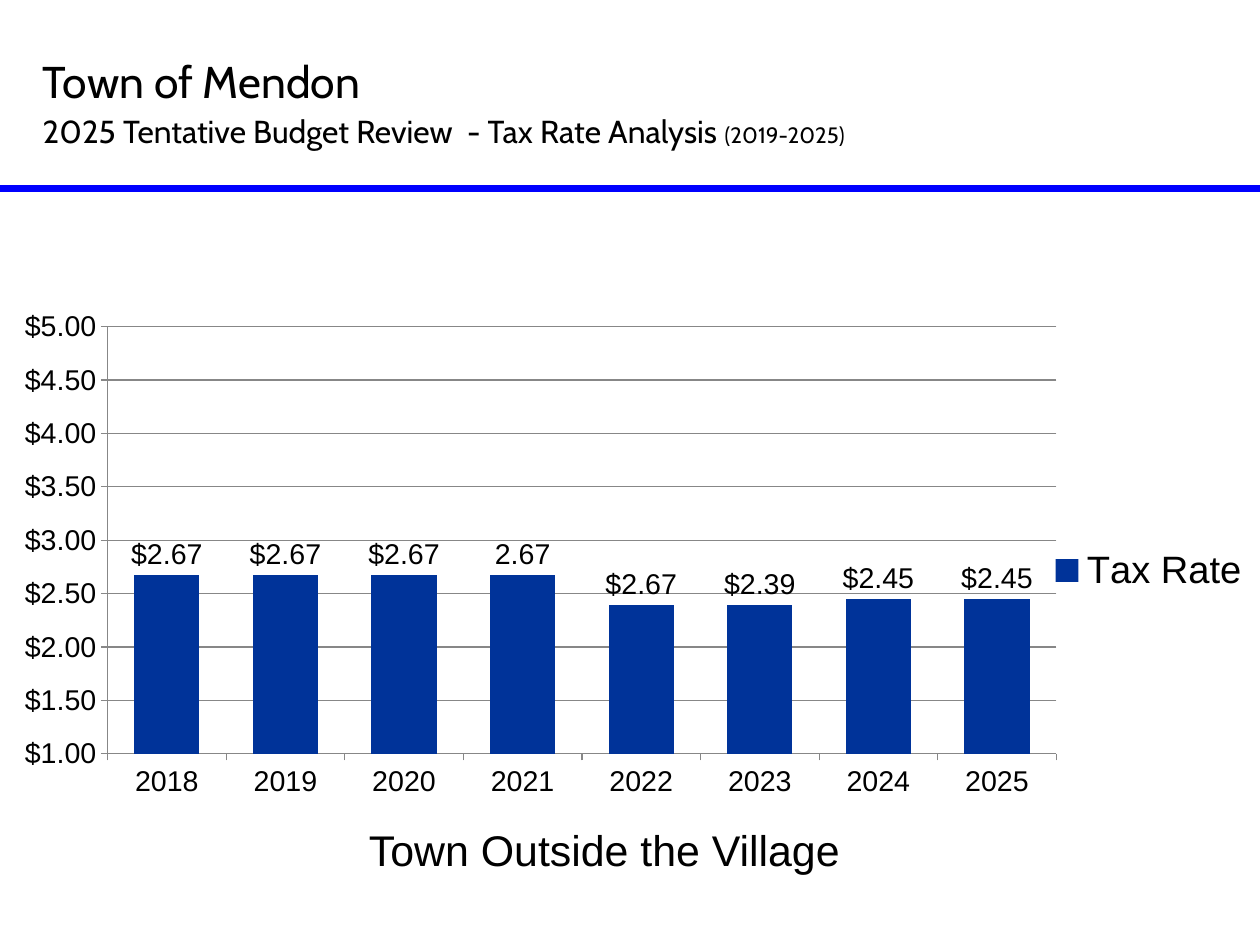
from dataclasses import dataclass

import lxml.etree
import pptx
import pptx.chart.data
import pptx.dml.color
import pptx.enum.chart
import pptx.enum.shapes
import pptx.enum.text
import pptx.oxml
import pptx.oxml.ns
import pptx.util

RGBColor = pptx.dml.color.RGBColor
BLACK = RGBColor(0x00, 0x00, 0x00)
RULE_BLUE = RGBColor(0x00, 0x00, 0xFF)
BAR_BLUE = RGBColor(0x00, 0x33, 0x99)
GRID_GRAY = RGBColor(0x87, 0x87, 0x87)

SLIDE_WIDTH = pptx.util.Cm(28)
SLIDE_HEIGHT = pptx.util.Cm(21)
DOLLARS = '"$"#,##0.00'
TAX_RATES = {
    "2018": 2.67, "2019": 2.67, "2020": 2.67, "2021": 2.67,
    "2022": 2.39, "2023": 2.39, "2024": 2.45, "2025": 2.45,
}
TYPED_LABELS = {"2021": "2.67", "2022": "$2.67", "2023": "$2.39"}


@dataclass(frozen=True)
class Area:
    """A rectangle in percent of the slide's width and height."""
    left: float
    top: float
    width: float
    height: float

    def lengths(self) -> tuple[int, int, int, int]:
        return (
            int(SLIDE_WIDTH * self.left / 100),
            int(SLIDE_HEIGHT * self.top / 100),
            int(SLIDE_WIDTH * self.width / 100),
            int(SLIDE_HEIGHT * self.height / 100),
        )


@dataclass(frozen=True)
class Phrase:
    text: str
    size: float
    ends_line: bool = False


TITLE_AREA = Area(2.5, 2.18, 69.15, 16.69)
CAPTION_AREA = Area(21.29, 86.58, 53.36, 6.65)
CHART_AREA = Area(-0.36, 31.56, 100, 54.78)
RULE_TOP = 19.95
PLOT_PERCENT = {"x": 8.9, "y": 5.5, "w": 75.3, "h": 82.5}
LEGEND_PERCENT = {"x": 83.5, "y": 47}


def set_font(font, size: float, name: str = "Arial") -> None:
    font.size = pptx.util.Pt(size)
    font.name = name
    font.color.rgb = BLACK


def add_text(slide, area: Area, phrases: list[Phrase], *, font_name: str,
             alignment=pptx.enum.text.PP_ALIGN.LEFT,
             anchor=pptx.enum.text.MSO_ANCHOR.TOP,
             line_spacing: float = 1.0) -> None:
    frame = slide.shapes.add_textbox(*area.lengths()).text_frame
    frame.word_wrap = True
    frame.vertical_anchor = anchor
    paragraph = frame.paragraphs[0]
    paragraph.alignment = alignment
    paragraph.line_spacing = line_spacing
    for phrase in phrases:
        run = paragraph.add_run()
        run.text = phrase.text
        set_font(run.font, phrase.size, font_name)
        if phrase.ends_line:
            paragraph.add_line_break()


def add_rule(slide) -> None:
    height = int(SLIDE_HEIGHT * RULE_TOP / 100)
    rule = slide.shapes.add_connector(
        pptx.enum.shapes.MSO_CONNECTOR.STRAIGHT, 0, height, SLIDE_WIDTH, height)
    rule.line.color.rgb = RULE_BLUE
    rule.line.width = pptx.util.Pt(4)
    properties = rule._element.spPr
    lxml.etree.SubElement(properties, pptx.oxml.ns.qn("a:effectLst"))


def set_layout(element, index: int, percent: dict[str, float], **settings: str) -> None:
    """Place a chart part, with its layout as the child at the index."""
    for layout in element.findall(pptx.oxml.ns.qn("c:layout")):
        element.remove(layout)
    settings |= {"xMode": "edge", "yMode": "edge"}
    settings |= {side: f"{value / 100:.3f}" for side, value in percent.items()}
    children = "".join(f'<c:{tag} val="{value}"/>' for tag, value in settings.items())
    element.insert(index, pptx.oxml.parse_xml(
        f'<c:layout {pptx.oxml.ns.nsdecls("c")}>'
        f"<c:manualLayout>{children}</c:manualLayout></c:layout>"))


def style_axes(chart) -> None:
    value_axis = chart.value_axis
    value_axis.minimum_scale = 1
    value_axis.maximum_scale = 5
    value_axis.major_unit = 0.5
    value_axis.has_major_gridlines = True
    value_axis.tick_labels.number_format = DOLLARS
    value_axis.tick_labels.number_format_is_linked = False
    for axis in (value_axis, chart.category_axis):
        axis.major_tick_mark = pptx.enum.chart.XL_TICK_MARK.OUTSIDE
        set_font(axis.tick_labels.font, 18)
    for line in (value_axis.major_gridlines.format.line,
                 value_axis.format.line, chart.category_axis.format.line):
        line.color.rgb = GRID_GRAY
        line.width = pptx.util.Pt(0.75)


def label_bars(plot) -> None:
    labels = plot.series[0].data_labels
    labels.show_value = True
    labels.number_format = DOLLARS
    labels.number_format_is_linked = False
    labels.position = pptx.enum.chart.XL_LABEL_POSITION.OUTSIDE_END
    set_font(labels.font, 18)
    years = list(TAX_RATES)
    for year, text in TYPED_LABELS.items():
        label = plot.series[0].points[years.index(year)].data_label
        run = label.text_frame.paragraphs[0].add_run()
        run.text = text
        set_font(run.font, 18)
        label.position = pptx.enum.chart.XL_LABEL_POSITION.OUTSIDE_END


def add_legend(chart) -> None:
    chart.has_legend = True
    legend = chart.legend
    legend.position = pptx.enum.chart.XL_LEGEND_POSITION.RIGHT
    legend.include_in_layout = False
    set_font(legend.font, 24)
    set_layout(legend._element, 1, LEGEND_PERCENT)


def add_tax_chart(slide) -> None:
    data = pptx.chart.data.CategoryChartData(number_format=DOLLARS)
    data.categories = list(TAX_RATES)
    data.add_series("Tax Rate", list(TAX_RATES.values()))
    chart = slide.shapes.add_chart(
        pptx.enum.chart.XL_CHART_TYPE.COLUMN_CLUSTERED,
        *CHART_AREA.lengths(), data).chart
    chart.has_title = False
    set_font(chart.font, 18)
    plot = chart.plots[0]
    plot.vary_by_categories = False
    plot.gap_width = 82
    plot.overlap = 13
    fill = plot.series[0].format.fill
    fill.solid()
    fill.fore_color.rgb = BAR_BLUE
    style_axes(chart)
    label_bars(plot)
    add_legend(chart)
    set_layout(chart._chartSpace.chart.plotArea, 0, PLOT_PERCENT, layoutTarget="inner")


def main() -> None:
    presentation = pptx.Presentation()
    presentation.slide_width = SLIDE_WIDTH
    presentation.slide_height = SLIDE_HEIGHT
    slide = presentation.slides.add_slide(presentation.slide_layouts[6])
    add_text(slide, TITLE_AREA, [
        Phrase("Town of Mendon", 28, ends_line=True),
        Phrase("2025 Tentative Budget Review  - Tax Rate Analysis ", 20),
        Phrase("(2019-2025)", 14),
    ], font_name="Cabin", anchor=pptx.enum.text.MSO_ANCHOR.MIDDLE, line_spacing=1.1)
    add_rule(slide)
    add_text(slide, CAPTION_AREA, [Phrase("Town Outside the Village", 27)],
             font_name="Arial", alignment=pptx.enum.text.PP_ALIGN.CENTER)
    add_tax_chart(slide)
    presentation.save("out.pptx")


if __name__ == "__main__":
    main()
